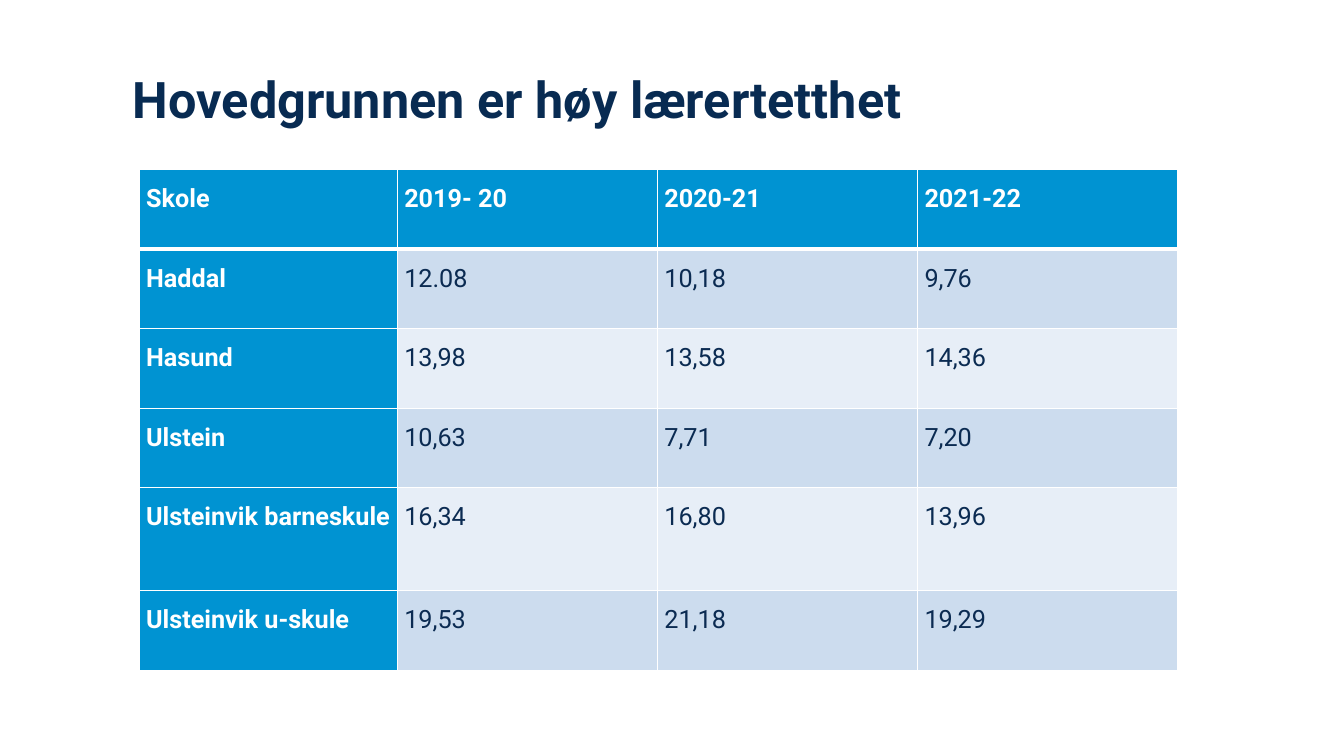
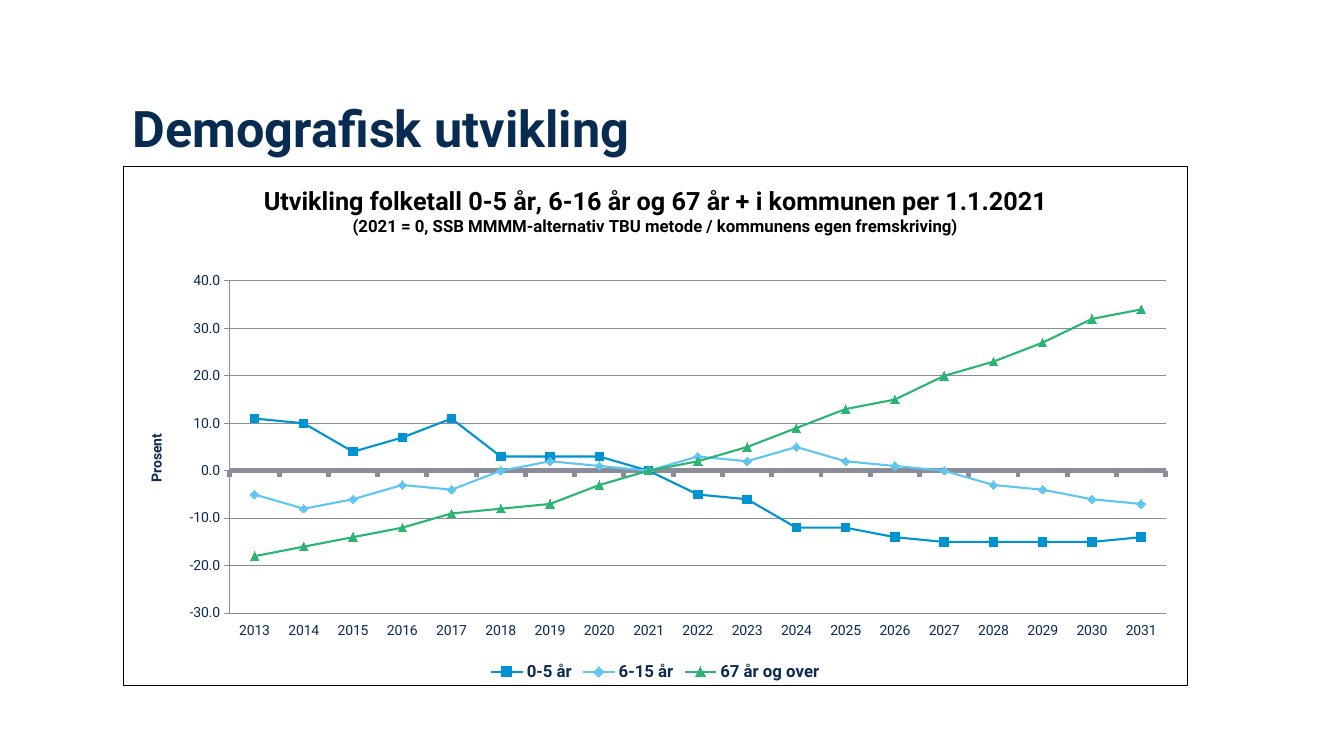
from dataclasses import dataclass

import lxml.etree
import pptx
import pptx.chart.chart
import pptx.chart.data
import pptx.dml.color
import pptx.enum.chart
import pptx.enum.text
import pptx.oxml
import pptx.oxml.ns
import pptx.slide
import pptx.table
import pptx.text.text
import pptx.util

Inches = pptx.util.Inches
Pt = pptx.util.Pt
qn = pptx.oxml.ns.qn


@dataclass(frozen=True)
class Theme:
    font: str = "Roboto"
    title: str = "082B52"
    text: str = "0B2B52"
    blue: str = "0093D2"
    light_blue: str = "5FC5F1"
    green: str = "2AB573"
    band_dark: str = "CCDCEE"
    band_light: str = "E7EEF7"
    grid: str = "8A8C99"
    white: str = "FFFFFF"
    black: str = "000000"
    title_size: int = 36
    body_size: int = 18
    legend_size: int = 12
    axis_size: int = 10


@dataclass(frozen=True)
class LineSeries:
    name: str
    values: tuple[int, ...]
    color: str
    marker: pptx.enum.chart.XL_MARKER_STYLE


THEME = Theme()
MARKER = pptx.enum.chart.XL_MARKER_STYLE

SCHOOL_ROWS = (
    ("Skole", "2019- 20", "2020-21", "2021-22"),
    ("Haddal", "12.08", "10,18", "9,76"),
    ("Hasund", "13,98", "13,58", "14,36"),
    ("Ulstein", "10,63", "7,71", "7,20"),
    ("Ulsteinvik barneskule", "16,34", "16,80", "13,96"),
    ("Ulsteinvik u-skule", "19,53", "21,18", "19,29"),
)
COLUMN_WIDTHS = (2.56, 2.58, 2.58, 2.58)
ROW_HEIGHTS = (0.79, 0.79, 0.79, 0.79, 1.02, 0.79)

YEARS = [str(year) for year in range(2013, 2032)]
POPULATION = (
    LineSeries(
        "0-5 år",
        (11, 10, 4, 7, 11, 3, 3, 3, 0, -5, -6, -12, -12, -14, -15, -15, -15, -15, -14),
        THEME.blue, MARKER.SQUARE,
    ),
    LineSeries(
        "6-15 år",
        (-5, -8, -6, -3, -4, 0, 2, 1, 0, 3, 2, 5, 2, 1, 0, -3, -4, -6, -7),
        THEME.light_blue, MARKER.DIAMOND,
    ),
    LineSeries(
        "67 år og over",
        (-18, -16, -14, -12, -9, -8, -7, -3, 0, 2, 5, 9, 13, 15, 20, 23, 27, 32, 34),
        THEME.green, MARKER.TRIANGLE,
    ),
)


def rgb(color: str) -> pptx.dml.color.RGBColor:
    return pptx.dml.color.RGBColor.from_string(color)


def style_font(font: pptx.text.text.Font, size: int, color: str, bold: bool) -> None:
    font.name = THEME.font
    font.size = Pt(size)
    font.bold = bold
    font.color.rgb = rgb(color)


def add_run(paragraph, text: str, size: int, color: str, bold: bool = True) -> None:
    run = paragraph.add_run()
    run.text = text
    style_font(run.font, size, color, bold)


def add_title(slide: pptx.slide.Slide, text: str, height: float) -> None:
    box = slide.shapes.add_textbox(Inches(1.22), Inches(0.6), Inches(10.9), Inches(height))
    frame = box.text_frame
    frame.word_wrap = True
    frame.vertical_anchor = pptx.enum.text.MSO_ANCHOR.MIDDLE
    paragraph = frame.paragraphs[0]
    paragraph.line_spacing = 0.9
    add_run(paragraph, text, THEME.title_size, THEME.title)


def set_borders(cell, widths: dict[str, float]) -> None:
    """Draw white borders; keys are the side letters L, R, T and B."""
    properties = cell._tc.get_or_add_tcPr()
    for side, width in widths.items():
        line = lxml.etree.SubElement(properties, qn(f"a:ln{side}"), w=str(int(Pt(width))))
        fill = lxml.etree.SubElement(line, qn("a:solidFill"))
        lxml.etree.SubElement(fill, qn("a:srgbClr"), val=THEME.white)


def fill_cell(table: pptx.table.Table, row: int, column: int, text: str) -> None:
    cell = table.cell(row, column)
    is_header = row == 0 or column == 0
    set_borders(cell, {"L": 1, "R": 1, "T": 3 if row == 1 else 1, "B": 3 if row == 0 else 1})
    cell.fill.solid()
    band = THEME.band_dark if row % 2 else THEME.band_light
    cell.fill.fore_color.rgb = rgb(THEME.blue if is_header else band)
    cell.margin_left = cell.margin_right = Inches(0.07)
    cell.margin_top = cell.margin_bottom = Inches(0)
    paragraph = cell.text_frame.paragraphs[0]
    paragraph.line_spacing = 1.5
    color = THEME.white if is_header else THEME.text
    add_run(paragraph, text, THEME.body_size, color, is_header)


def add_school_table(slide: pptx.slide.Slide) -> None:
    table = slide.shapes.add_table(
        len(SCHOOL_ROWS), len(COLUMN_WIDTHS), Inches(1.38), Inches(1.68),
        Inches(sum(COLUMN_WIDTHS)), Inches(sum(ROW_HEIGHTS)),
    ).table
    table.horz_banding = False
    for column, width in zip(table.columns, COLUMN_WIDTHS):
        column.width = Inches(width)
    for row, height in zip(table.rows, ROW_HEIGHTS):
        row.height = Inches(height)
    for row, texts in enumerate(SCHOOL_ROWS):
        for column, text in enumerate(texts):
            fill_cell(table, row, column, text)


def set_layout(element, **fractions: float) -> None:
    """Place a chart part by fractions of the chart's size."""
    for old_layout in element.findall(qn("c:layout")):
        element.remove(old_layout)
    layout = lxml.etree.Element(qn("c:layout"))
    manual = lxml.etree.SubElement(layout, qn("c:manualLayout"))
    settings = {"xMode": "edge", "yMode": "edge", **fractions}
    if "w" in fractions:
        settings = {"layoutTarget": "inner", **settings}
    for name, value in settings.items():
        lxml.etree.SubElement(manual, qn(f"c:{name}"), val=str(value))
    element.insert(0 if element.find(qn("c:tx")) is None else 1, layout)


def add_chart_border(chart: pptx.chart.chart.Chart) -> None:
    border = pptx.oxml.parse_xml(
        f'<c:spPr {pptx.oxml.ns.nsdecls("c", "a")}>'
        f'<a:solidFill><a:srgbClr val="{THEME.white}"/></a:solidFill>'
        f'<a:ln w="{int(Pt(0.75))}"><a:solidFill>'
        f'<a:srgbClr val="{THEME.black}"/></a:solidFill></a:ln></c:spPr>'
    )
    chart.element.find(qn("c:chart")).addnext(border)


def style_line(line, color: str, width: float) -> None:
    line.color.rgb = rgb(color)
    line.width = Pt(width)


def style_axes(chart: pptx.chart.chart.Chart) -> None:
    outside = pptx.enum.chart.XL_TICK_MARK.OUTSIDE
    years, percent = chart.category_axis, chart.value_axis
    for axis, width in ((years, 3.5), (percent, 0.75)):
        axis.major_tick_mark = outside
        style_line(axis.format.line, THEME.grid, width)
        style_font(axis.tick_labels.font, THEME.axis_size, THEME.text, False)
    years.tick_label_position = pptx.enum.chart.XL_TICK_LABEL_POSITION.LOW
    percent.minimum_scale, percent.maximum_scale, percent.major_unit = -30, 40, 10
    percent.tick_labels.number_format = "0.0"
    percent.tick_labels.number_format_is_linked = False
    percent.has_major_gridlines = True
    style_line(percent.major_gridlines.format.line, THEME.grid, 0.75)
    paragraph = percent.axis_title.text_frame.paragraphs[0]
    add_run(paragraph, "Prosent", THEME.axis_size, THEME.text)
    set_layout(percent.axis_title.element, x=0.02, y=0.51)


def add_population_chart(slide: pptx.slide.Slide) -> None:
    data = pptx.chart.data.CategoryChartData()
    data.categories = YEARS
    for group in POPULATION:
        data.add_series(group.name, group.values)
    chart = slide.shapes.add_chart(
        pptx.enum.chart.XL_CHART_TYPE.LINE_MARKERS,
        Inches(1.22), Inches(1.65), Inches(10.56), Inches(5.16), data,
    ).chart
    style_font(chart.font, THEME.axis_size, THEME.text, False)
    add_chart_border(chart)

    frame = chart.chart_title.text_frame
    add_run(frame.paragraphs[0],
            "Utvikling folketall 0-5 år, 6-16 år og 67 år + i kommunen per 1.1.2021",
            THEME.body_size, THEME.black)
    add_run(frame.add_paragraph(),
            "(2021 = 0, SSB MMMM-alternativ TBU metode / kommunens egen fremskriving)",
            THEME.legend_size, THEME.black)
    chart.chart_title.include_in_layout = False

    chart.has_legend = True
    chart.legend.position = pptx.enum.chart.XL_LEGEND_POSITION.BOTTOM
    chart.legend.include_in_layout = False
    style_font(chart.legend.font, THEME.legend_size, THEME.text, True)

    style_axes(chart)
    plot = chart.plots[0]
    plot.vary_by_categories = False
    for series, group in zip(plot.series, POPULATION):
        series.smooth = False
        style_line(series.format.line, group.color, 1.5)
        series.marker.style = group.marker
        series.marker.size = 6
        series.marker.format.fill.solid()
        series.marker.format.fill.fore_color.rgb = rgb(group.color)
        style_line(series.marker.format.line, group.color, 0.75)
    plot_area = chart.element.find(f'{qn("c:chart")}/{qn("c:plotArea")}')
    set_layout(plot_area, x=0.1, y=0.22, w=0.88, h=0.64)


def main() -> None:
    presentation = pptx.Presentation()
    presentation.slide_width = Inches(13.33)
    presentation.slide_height = Inches(7.5)
    blank = presentation.slide_layouts[6]

    density = presentation.slides.add_slide(blank)
    add_title(density, "Hovedgrunnen er høy lærertetthet", 0.83)
    add_school_table(density)

    demography = presentation.slides.add_slide(blank)
    add_title(demography, "Demografisk utvikling", 1.41)
    add_population_chart(demography)

    presentation.save("out.pptx")


if __name__ == "__main__":
    main()
